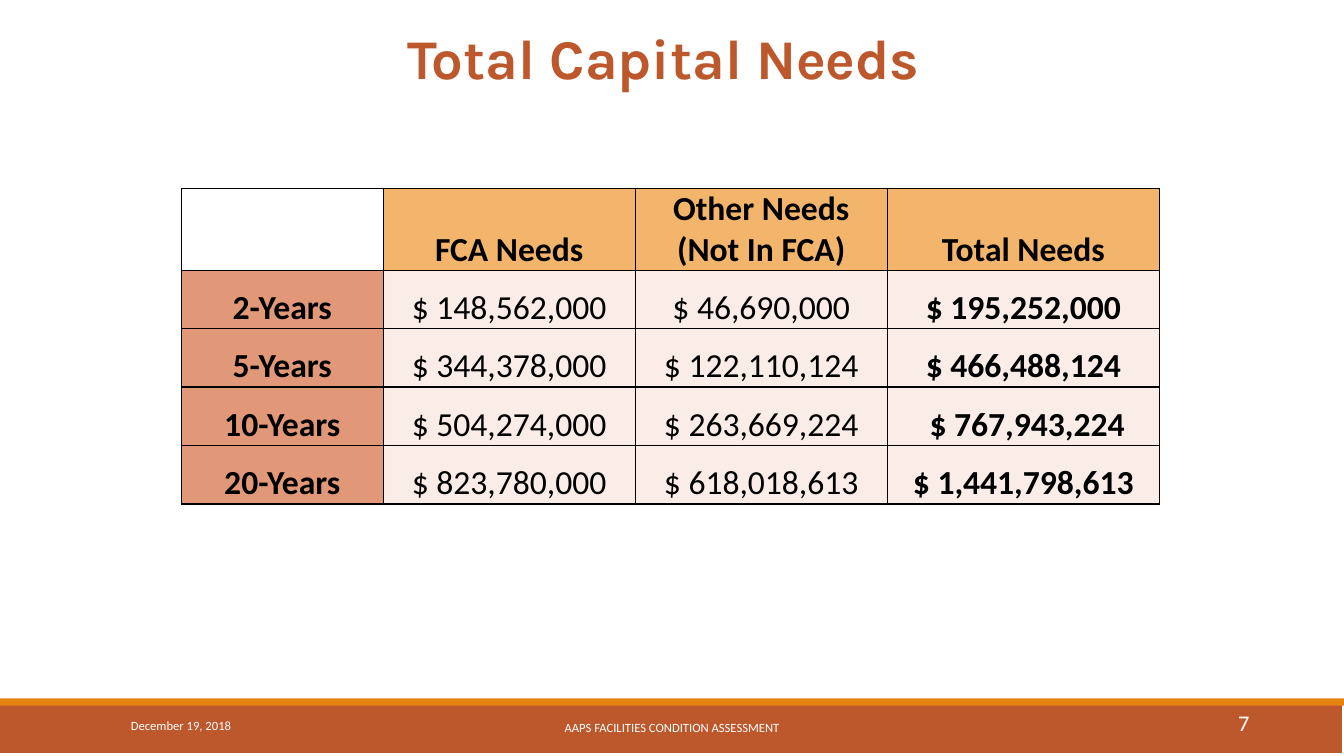
from lxml.etree import SubElement
from pptx import Presentation
from pptx.dml.color import RGBColor
from pptx.enum.shapes import MSO_SHAPE
from pptx.enum.text import MSO_ANCHOR, PP_ALIGN
from pptx.oxml.ns import qn
from pptx.util import Inches, Pt

HUES = {
    "rust": "BD582C", "orange": "E48312", "head": "F3B56C", "side": "E09878",
    "body": "FAEDE7", "white": "FFFFFF", "black": "000000",
}
NEEDS = [
    ["", "FCA Needs", "Other Needs\n(Not In FCA)", "Total Needs"],
    ["2-Years", "$ 148,562,000", "$ 46,690,000", "$ 195,252,000"],
    ["5-Years", "$ 344,378,000", "$ 122,110,124", "$ 466,488,124"],
    ["10-Years", "$ 504,274,000", "$ 263,669,224", " $ 767,943,224"],
    ["20-Years", "$ 823,780,000", "$ 618,018,613", "$ 1,441,798,613"],
]


def hue(name):
    return RGBColor.from_string(HUES[name])


def write(frame, text, size=9, font="Calibri", color="white", bold=False,
          align=PP_ALIGN.LEFT, space=None):
    for i, line in enumerate(text.split("\n")):
        para = frame.add_paragraph() if i else frame.paragraphs[0]
        para.alignment = align
        para.line_spacing = space
        run = para.add_run()
        run.text = line
        run.font.size = Pt(size)
        run.font.name = font
        run.font.bold = bold
        run.font.color.rgb = hue(color)


def border(cell):
    props = cell._tc.get_or_add_tcPr()
    for i, side in enumerate(("lnL", "lnR", "lnT", "lnB")):
        line = SubElement(props, qn(f"a:{side}"), w=str(Pt(1)))
        fill = SubElement(line, qn("a:solidFill"))
        SubElement(fill, qn("a:srgbClr"), val=HUES["black"])
        # Borders come before the fill
        props.remove(line)
        props.insert(i, line)


class Deck:
    def __init__(self):
        self.show = Presentation()
        self.show.slide_width = Inches(13.33)
        self.show.slide_height = Inches(7.5)
        self.slide = self.show.slides.add_slide(self.show.slide_layouts[5])

    def title(self, text, *box):
        head = self.slide.shapes.title
        head.left, head.top, head.width, head.height = map(Inches, box)
        head.text_frame.vertical_anchor = MSO_ANCHOR.MIDDLE
        write(head.text_frame, text, size=40, font="Karla", color="rust",
              bold=True, align=PP_ALIGN.CENTER, space=0.85)

    def bar(self, color, *box):
        bar = self.slide.shapes.add_shape(MSO_SHAPE.RECTANGLE, *map(Inches, box))
        bar.shadow.inherit = False
        bar.fill.solid()
        bar.fill.fore_color.rgb = hue(color)
        bar.line.fill.background()

    def label(self, text, *box, **style):
        frame = self.slide.shapes.add_textbox(*map(Inches, box)).text_frame
        frame.word_wrap = True
        frame.vertical_anchor = MSO_ANCHOR.MIDDLE
        write(frame, text, **style)

    def table(self, data, left, top, widths, heights):
        box = map(Inches, (left, top, sum(widths), sum(heights)))
        table = self.slide.shapes.add_table(len(data), len(widths), *box).table
        table.first_row = table.horz_banding = False
        for col, width in zip(table.columns, widths):
            col.width = Inches(width)
        for row, height in zip(table.rows, heights):
            row.height = Inches(height)
        for r, line in enumerate(data):
            for c, text in enumerate(line):
                self.cell(table.cell(r, c), text, r, c, c == len(line) - 1)

    def cell(self, cell, text, r, c, last):
        cell.margin_left = cell.margin_right = 0
        cell.margin_top = cell.margin_bottom = 0
        cell.vertical_anchor = MSO_ANCHOR.BOTTOM
        if text:
            cell.fill.solid()
            cell.fill.fore_color.rgb = hue(
                "head" if r == 0 else "side" if c == 0 else "body")
            write(cell.text_frame, text, size=24, color="black",
                  bold=r == 0 or c == 0 or last, align=PP_ALIGN.CENTER)
        else:
            cell.fill.background()
        border(cell)


def main():
    deck = Deck()
    # Footer bars
    deck.bar("rust", -0.02, 6.97, 13.33, 0.5)
    deck.bar("orange", 0, 6.93, 13.33, 0.07)
    # Title
    deck.title("Total Capital Needs ", 0.15, 0.22, 13, 0.8)
    # Footer text
    deck.label("December 19, 2018", 1.2, 7, 2.7, 0.4)
    deck.label("AAPS FACILITIES CONDITION ASSESSMENT", 4.03, 7.02, 5.27, 0.4,
               align=PP_ALIGN.CENTER)
    deck.label("7", 11.06, 6.97, 1.43, 0.4, size=16, align=PP_ALIGN.RIGHT)
    # Needs by period
    deck.table(NEEDS, 1.8, 1.87, [2, 2.5, 2.5, 2.7], [0.81] + [0.58] * 4)
    deck.show.save("out.pptx")


if __name__ == "__main__":
    main()
